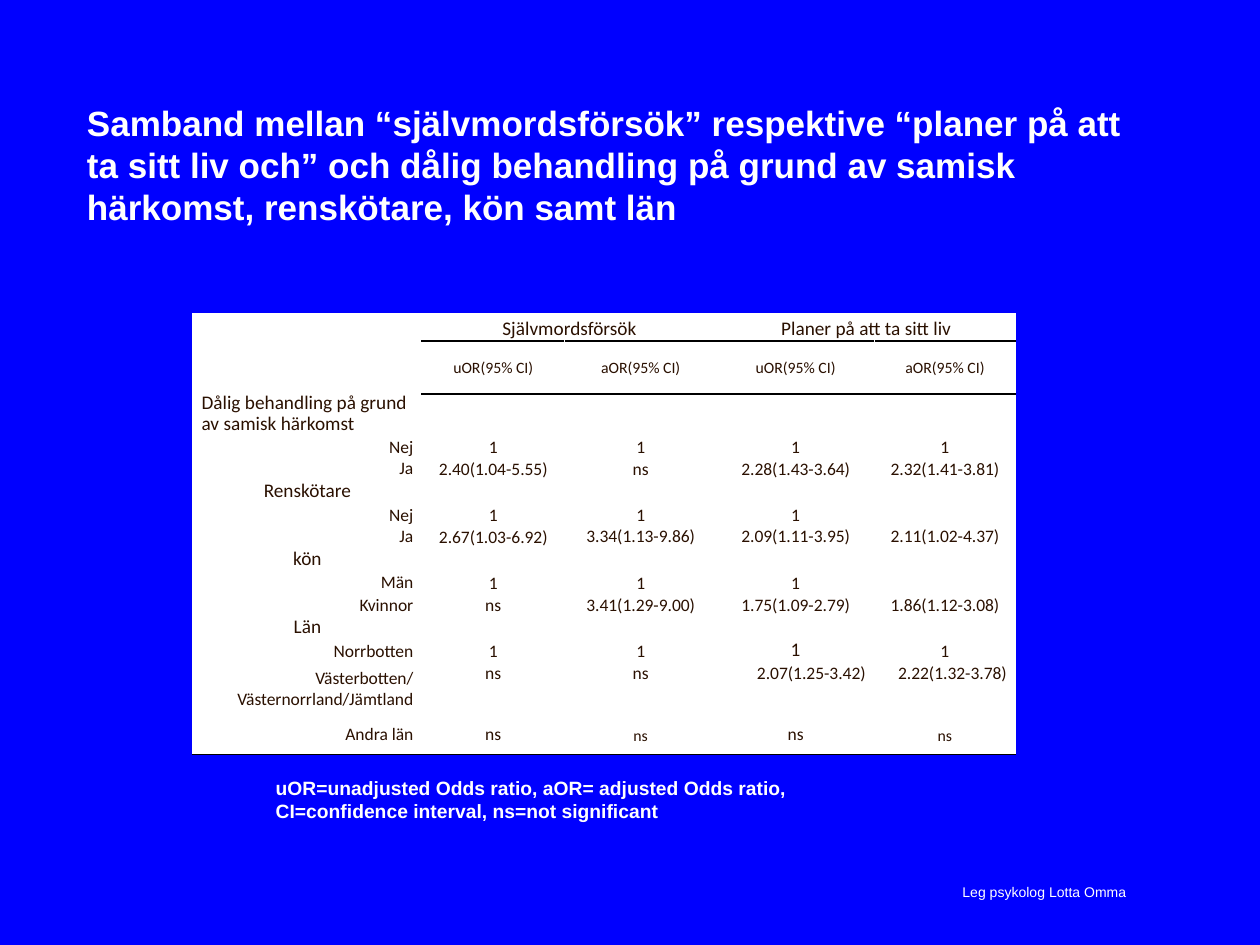
from lxml import etree
from pptx import Presentation
from pptx import util as u
from pptx.dml.color import RGBColor
from pptx.enum import text
from pptx.oxml import ns

BLUE = RGBColor(0x00, 0x00, 0xFF)
WHITE = RGBColor(0xFF, 0xFF, 0xFF)
BROWN = RGBColor(0x2A, 0x10, 0x00)
BLACK = RGBColor(0x00, 0x00, 0x00)

LEFT, CENTER, RIGHT = text.PP_ALIGN.LEFT, text.PP_ALIGN.CENTER, text.PP_ALIGN.RIGHT
TOP, MIDDLE, BOTTOM = text.MSO_ANCHOR.TOP, text.MSO_ANCHOR.MIDDLE, text.MSO_ANCHOR.BOTTOM

COLUMN_WIDTHS = [1.82, 1.13, 1.21, 1.25, 1.12]
ROW_HEIGHTS = [0.21, 0.42, 0.33] + [0.18] * 10 + [0.42, 0.31]
ROWS = [
    ["", "Självmordsförsök", "", "Planer på att ta sitt liv", ""],
    ["", "uOR(95% CI)", "aOR(95% CI)", "uOR(95% CI)", "aOR(95% CI)"],
    ["Dålig behandling på grund av samisk härkomst", "", "", "", ""],
    ["Nej", "1", "1", "1", "1"],
    ["Ja", "2.40(1.04-5.55)", "ns", "2.28(1.43-3.64)", "2.32(1.41-3.81)"],
    ["Renskötare", "", "", "", ""],
    ["Nej", "1", "1", "1", ""],
    ["Ja", "2.67(1.03-6.92)", "3.34(1.13-9.86)", "2.09(1.11-3.95)", "2.11(1.02-4.37)"],
    ["kön", "", "", "", ""],
    ["Män", "1", "1", "1", ""],
    ["Kvinnor", "ns", "3.41(1.29-9.00)", "1.75(1.09-2.79)", "1.86(1.12-3.08)"],
    ["Län", "", "", "", ""],
    ["Norrbotten", "1", "1", "1", "1"],
    ["Västerbotten/Västernorrland/Jämtland", "ns", "ns", "2.07(1.25-3.42)", "2.22(1.32-3.78)"],
    ["Andra län", "ns", "ns", "ns", "ns"],
]
HEADER_ROW, SUBHEADER_ROW, FIRST_GROUP_ROW, COUNTIES_ROW = 0, 1, 2, 13
LAST_ROW = len(ROWS) - 1
GROUP_ROWS = {2, 5, 8, 11}
SIZES = {(12, 3): 11, (14, 2): 9, (14, 4): 9}
TOP_CELLS = {(4, 0), (7, 0), (7, 2), (7, 3), (7, 4), (9, 0), (10, 0), (10, 3), (10, 4)}
TOP_CELLS |= {(COUNTIES_ROW, column) for column in range(1, 5)}


class SlideBuilder:
    font = "Arial"
    table_font = "Calibri"

    def __init__(self, slide):
        self.slide = slide
        slide.background.fill.solid()
        slide.background.fill.fore_color.rgb = BLUE

    def add_run(self, paragraph, words, size, color=WHITE, bold=False, font=None):
        run = paragraph.add_run()
        run.text = words
        run.font.size = u.Pt(size)
        run.font.name = font or self.font
        run.font.bold = bold
        run.font.color.rgb = color

    def fill_frame(self, shape, words, size, bold, align, wrap=True):
        frame = shape.text_frame
        frame.auto_size = text.MSO_AUTO_SIZE.NONE
        frame.word_wrap = wrap
        frame.vertical_anchor = MIDDLE
        paragraph = frame.paragraphs[0]
        paragraph.alignment = align
        self.add_run(paragraph, words, size, bold=bold)

    def title(self, words, left, top, width, height):
        shape = self.slide.shapes.title
        shape.left, shape.top = u.Inches(left), u.Inches(top)
        shape.width, shape.height = u.Inches(width), u.Inches(height)
        self.fill_frame(shape, words, 20, True, LEFT)

    def text_box(self, words, left, top, width, height, size, bold=False, align=LEFT, wrap=True):
        shape = self.slide.shapes.add_textbox(
            u.Inches(left), u.Inches(top), u.Inches(width), u.Inches(height))
        self.fill_frame(shape, words, size, bold, align, wrap)

    def border(self, cell, side):
        properties = cell._tc.get_or_add_tcPr()
        line = etree.Element(ns.qn(f"a:{side}"), w=str(u.Pt(1)))
        fill = etree.SubElement(line, ns.qn("a:solidFill"))
        etree.SubElement(fill, ns.qn("a:srgbClr"), val=str(BLACK))
        position = len(properties.findall(ns.qn("a:lnT")))
        properties.insert(position, line)

    def cell(self, cell, words, size, align, anchor, spacing):
        cell.fill.solid()
        cell.fill.fore_color.rgb = WHITE
        cell.margin_left = cell.margin_right = u.Inches(0.07)
        cell.margin_top = cell.margin_bottom = 0
        cell.vertical_anchor = anchor
        paragraph = cell.text_frame.paragraphs[0]
        paragraph.alignment = align
        paragraph.line_spacing = spacing
        if words:
            self.add_run(paragraph, words, size, BROWN, font=self.table_font)
        else:
            etree.SubElement(paragraph._p, ns.qn("a:endParaRPr"), sz=str(size * 100))

    def table(self, left, top):
        frame = self.slide.shapes.add_table(
            len(ROWS), len(COLUMN_WIDTHS), u.Inches(left), u.Inches(top),
            u.Inches(sum(COLUMN_WIDTHS)), u.Inches(sum(ROW_HEIGHTS)))
        table = frame.table
        table.first_row = table.horz_banding = False
        for column, width in zip(table.columns, COLUMN_WIDTHS):
            column.width = u.Inches(width)
        for row, height in zip(table.rows, ROW_HEIGHTS):
            row.height = u.Inches(height)
        for row, values in enumerate(ROWS):
            for column, words in enumerate(values):
                self.table_cell(table.cell(row, column), row, column, words)
        for column in (1, 3):
            table.cell(HEADER_ROW, column).merge(table.cell(HEADER_ROW, column + 1))

    def table_cell(self, cell, row, column, words):
        size, align, anchor, spacing = 10, CENTER, MIDDLE, u.Pt(12)
        if row == HEADER_ROW:
            size, anchor, spacing = 11, BOTTOM, 1.15
        elif row == SUBHEADER_ROW:
            size = 9
        elif column == 0 and row in GROUP_ROWS:
            size = 11
            align = LEFT if row == FIRST_GROUP_ROW else CENTER
        elif column == 0 or (row == COUNTIES_ROW and column > 2):
            align = RIGHT
        if (row, column) in TOP_CELLS:
            anchor = TOP
        size = SIZES.get((row, column), size)
        self.cell(cell, words, size, align, anchor, spacing)
        if column > 0 and row in (SUBHEADER_ROW, FIRST_GROUP_ROW):
            self.border(cell, "lnT")
        if row == LAST_ROW or (column > 0 and row in (HEADER_ROW, SUBHEADER_ROW)):
            self.border(cell, "lnB")


def main():
    presentation = Presentation()
    presentation.slide_width = u.Inches(10)
    presentation.slide_height = u.Inches(7.5)
    builder = SlideBuilder(presentation.slides.add_slide(presentation.slide_layouts[5]))
    builder.title(
        "Samband mellan “självmordsförsök” respektive “planer på att ta sitt liv och” "
        "och dålig behandling på grund av samisk härkomst, renskötare, kön samt län",
        0.59, 0.68, 8.5, 1.25)
    builder.text_box("Leg psykolog Lotta Omma", 6.58, 6.83, 3.42, 0.5, 8,
                     align=CENTER, wrap=False)
    builder.table(1.53, 2.49)
    builder.text_box(
        "uOR=unadjusted Odds ratio, aOR= adjusted Odds ratio, "
        "CI=confidence interval, ns=not significant",
        2.09, 6.11, 5.2, 0.47, 11, bold=True)
    presentation.save("out.pptx")


if __name__ == "__main__":
    main()
